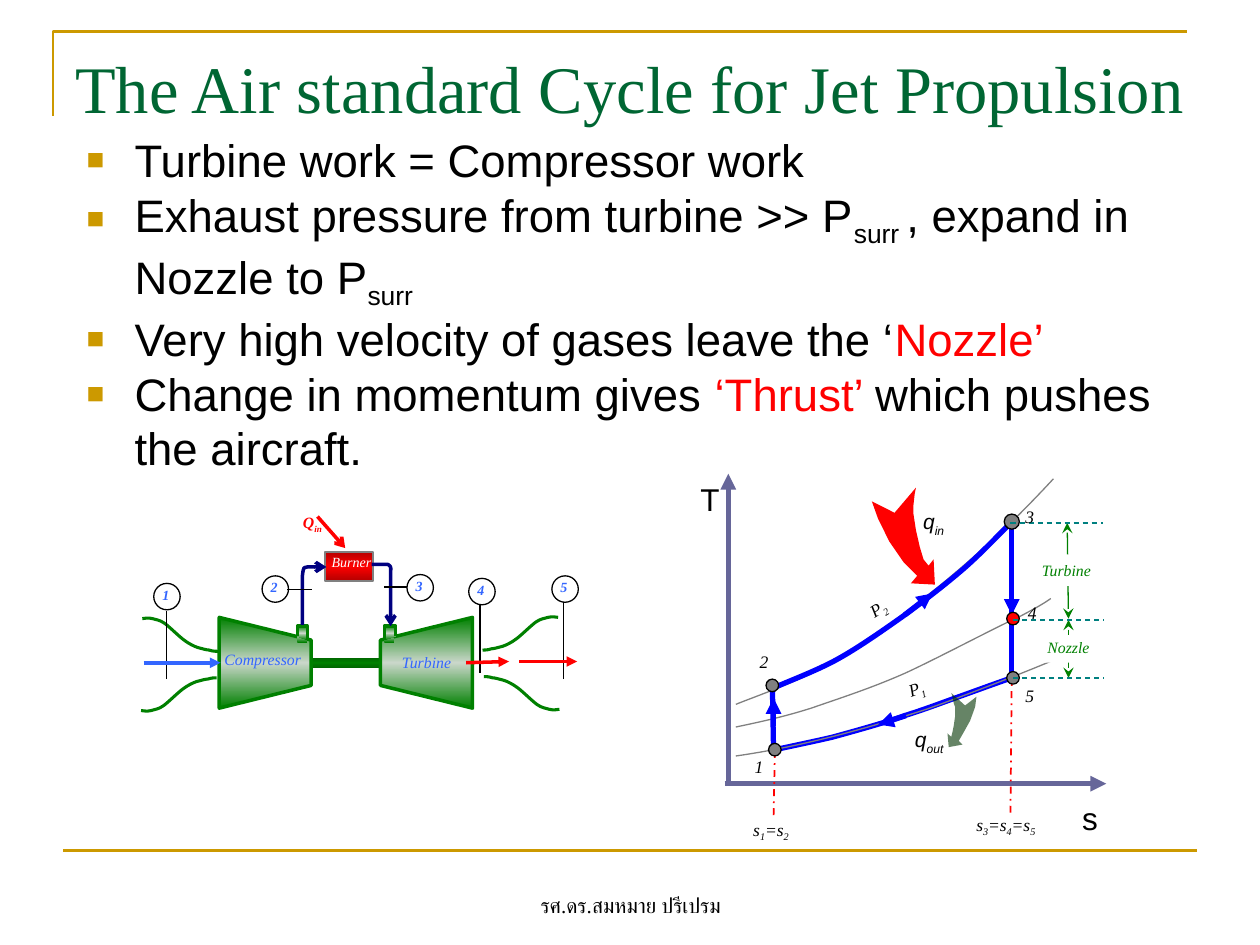
from copy import deepcopy
from lxml.etree import SubElement
from pptx import Presentation
from pptx.dml.color import RGBColor
from pptx.enum.dml import MSO_LINE
from pptx.enum.shapes import MSO_CONNECTOR, MSO_SHAPE
from pptx.enum.text import MSO_ANCHOR, PP_ALIGN
from pptx.oxml.ns import qn
from pptx.util import Inches, Pt

SERIF, SANS = "Times New Roman", "Arial"
C = dict(gold="CC9900", title="006633", black="000000", white="FFFFFF", red="FF0000",
         maroon="B60000", gray="808080", navy="000080", sky="3366FF", green="008000",
         pine="006700", mist="CAD7CA", axis="666699", blue="0000FF", teal="008080",
         moss="003300")

TITLE = "The Air standard Cycle for Jet Propulsion"
AUTHOR = "รศ.ดร.สมหมาย ปรีเปรม"
# In every text, the pieces after an odd number of bars are subscripts.
BULLETS = [
    [("Turbine work = Compressor work", "black")],
    [("Exhaust pressure from turbine >> P|surr |, expand in Nozzle to P|surr", "black")],
    [("Very high velocity of gases leave the ‘", "black"), ("Nozzle’", "red")],
    [("Change in momentum gives ", "black"), ("‘Thrust’ ", "red"),
     ("which pushes the aircraft.", "black")],
]

# Engine: station number -> left and top of its circle
STATIONS = {"1": (1.22, 4.63), "2": (2.08, 4.57), "3": (3.23, 4.56),
            "4": (3.72, 4.59), "5": (4.38, 4.57)}
AXIS_Y = 5.26
ROTORS = [(1.74, 2.47), (3.75, 3.02)]  # x of the wide and the narrow end
PORTS = [(2.44, 2.36), (3.05, 3.14)]  # x of the long and the short side
DUCT = [(0, 0), (.02, 0, .04, 0, .07, .01), (.09, .01, .12, .02, .16, .03),
        (.19, .04, .23, .06, .27, .09), (.31, .12, .38, .19, .42, .22),
        (.46, .25, .49, .25, .52, .26), (.56, .27, .58, .26, .6, .26)]
DUCTS = [(3.84, 5.37, 1, 1), (3.83, 5.16, 1, -1), (1.72, 5.38, -1, 1), (1.73, 5.17, -1, -1)]
BURNER_PIPES = [
    [(2.4, 4.96), (2.4, 4.57), (2.41, 4.49, 2.41, 4.51, 2.44, 4.5), (2.59, 4.5)],
    [(2.95, 4.48), (3.08, 4.48), (3.11, 4.5, 3.1, 4.5, 3.1, 4.58), (3.1, 4.97)],
]

# T-s diagram: centre, diameter and colour of each state
STATES = {"1": (6.15, 5.95, .1, "gray"), "2": (6.13, 5.44, .1, "gray"),
          "3": (8.03, 4.14, .12, "gray"), "4": (8.04, 4.91, .1, "red"),
          "5": (8.04, 5.38, .1, "gray")}
PROCESS, ISOBAR = ("blue", 3), ("gray", .75)
CURVES = [
    (PROCESS, [(6.11, 5.96), (6.19, 5.94, 6.44, 5.89, 6.61, 5.85),
               (6.79, 5.8, 7.01, 5.74, 7.18, 5.68), (7.34, 5.63, 7.47, 5.58, 7.61, 5.53),
               (7.75, 5.48, 7.94, 5.41, 8.03, 5.38)]),
    (ISOBAR, [(5.84, 6), (6.05, 5.97, 6.26, 5.93, 6.51, 5.87),
              (6.76, 5.81, 7.04, 5.73, 7.35, 5.63), (7.66, 5.52, 8.15, 5.33, 8.36, 5.24),
              (8.58, 5.16, 8.61, 5.14, 8.64, 5.12)]),
    (ISOBAR, [(5.84, 5.59), (5.96, 5.54, 6.34, 5.41, 6.58, 5.27),
              (6.82, 5.14, 7.08, 4.94, 7.29, 4.78), (7.5, 4.62, 7.66, 4.48, 7.84, 4.32),
              (8.02, 4.16, 8.26, 3.91, 8.36, 3.8)]),
    (PROCESS, [(6.14, 5.46), (6.22, 5.42, 6.47, 5.33, 6.65, 5.23),
               (6.83, 5.13, 7.04, 4.98, 7.21, 4.86), (7.37, 4.74, 7.5, 4.64, 7.64, 4.52),
               (7.78, 4.4, 7.95, 4.22, 8.03, 4.14)]),
    (ISOBAR, [(5.84, 5.77), (6.03, 5.73, 6.22, 5.69, 6.44, 5.62),
              (6.67, 5.54, 6.92, 5.46, 7.19, 5.34), (7.47, 5.21, 7.9, 4.98, 8.1, 4.89),
              (8.29, 4.79, 8.31, 4.77, 8.34, 4.75)]),
]
HEAT_IN = [(6.92, 3.98), (6.97, 4.12), (7.06, 4.3), (7.17, 4.46), (7.28, 4.57), (7.23, 4.63),
           (7.42, 4.64), (7.41, 4.44), (7.37, 4.49), (7.33, 4.44), (7.3, 4.34), (7.27, 4.21),
           (7.25, 4.08), (7.25, 4.01), (7.26, 3.92), (7.27, 3.87), (7.1, 4.07)]
HEAT_OUT = [(7.75, 5.53), (7.74, 5.61), (7.7, 5.72), (7.65, 5.81), (7.61, 5.88), (7.64, 5.91),
            (7.53, 5.93), (7.52, 5.82), (7.55, 5.85), (7.56, 5.81), (7.57, 5.76), (7.58, 5.69),
            (7.58, 5.61), (7.57, 5.58), (7.56, 5.53), (7.55, 5.5), (7.66, 5.6)]

# (colour, width, options, lines as x1, y1, x2, y2)
ENGINE_LINES = [
    ("black", .75, {}, [(3.23, 4.66, 3.05, 4.66), (2.28, 4.68, 2.48, 4.68),
                        (3.81, 5.34, 3.81, 4.8), (4.47, 5.39, 4.47, 4.78),
                        (1.32, 5.39, 1.32, 4.85)]),
    ("red", 2, dict(tail="arrow"), [(2.52, 4.1, 2.74, 4.35)]),
    ("sky", 2, dict(tail="triangle"), [(1.14, 5.26, 1.75, 5.26)]),
    ("red", 2, dict(tail="triangle"), [(3.7, 5.26, 4.04, 5.25), (4.12, 5.25, 4.58, 5.25)]),
]
CYCLE_LINES = [
    ("axis", 3, dict(tail="triangle"), [(5.75, 6.22, 8.78, 6.22), (5.78, 6.24, 5.78, 3.76)]),
    ("red", 1, dict(dash=MSO_LINE.DASH_DOT), [(6.14, 6.47, 6.15, 5.95), (8.02, 6.45, 8.03, 5.35)]),
    ("blue", 3, {}, [(6.13, 5.44, 6.14, 5.98), (8.03, 4.16, 8.03, 5.37)]),
    ("blue", 3, dict(tail="triangle"), [(7.19, 5.68, 6.97, 5.75), (7.18, 4.88, 7.4, 4.71),
                                        (6.14, 5.76, 6.14, 5.54), (8.03, 4.69, 8.03, 4.88)]),
]
SPAN_LINES = [
    ("green", .75, dict(head="stealth", tail="stealth"), [(8.48, 4.92, 8.48, 5.38),
                                                          (8.47, 4.15, 8.48, 4.91)]),
    ("teal", .75, dict(dash=MSO_LINE.DASH), [(8.02, 4.15, 8.75, 4.15), (8.04, 5.38, 8.76, 5.38),
                                             (8.04, 4.92, 8.76, 4.92)]),
]

TIGHT = dict(center=True, spacing=.8)
# (size, colour, options, labels as text, box, rotation)
LABELS = [
    (8, "white", TIGHT, [("Burner", (2.51, 4.37, .56, .21), 0)]),
    (9, "red", dict(center=True, bold=True), [("Q|in", (2.25, 4.02, .46, .25), 0)]),
    (9, "sky", dict(center=True), [("Compressor", (1.66, 5.11, .85, .25), 0),
                                   ("Turbine", (3.05, 5.13, .67, .25), 0)]),
    (8, "sky", dict(TIGHT, bold=True), [(number, (x - .03, y, .2, .21), 0)
                                        for number, (x, y) in STATIONS.items()]),
    (18, "black", dict(font=SANS, italic=False), [("s", (8.49, 6.29, .29, .4), 0),
                                                  ("T", (5.46, 3.76, .29, .4), 0)]),
    (12, "black", dict(font=SANS, center=True, wrap=False), [("q|out", (7.15, 5.72, .45, .3), 0),
                                                            ("q|in", (7.22, 3.99, .38, .3), 0)]),
    (10, "black", dict(spacing=.8), [("P|2", (6.8, 4.7, .37, .23), 328.1),
                                     ("P|1", (7.11, 5.34, .37, .23), 340.7)]),
    (10, "black", {}, [("1", (5.89, 5.95, .23, .27), 0), ("2", (5.93, 5.12, .33, .27), 0),
                       ("3", (8.04, 3.97, .29, .27), 0), ("4", (8.06, 4.73, .33, .27), 0),
                       ("5", (8.04, 5.39, .33, .27), 0), ("s|1|=s|2", (5.88, 6.45, .53, .27), 0),
                       ("s|3|=s|4|=s|5", (7.65, 6.41, .8, .27), 0)]),
    (9, "green", dict(fill="white"), [("Turbine", (8.17, 4.4, .61, .25), 0)]),
    (9, "green", dict(TIGHT, fill="white"), [("Nozzle", (8.2, 5.04, .56, .22), 0)]),
]

prs = Presentation()
prs.slide_width, prs.slide_height = Inches(10), Inches(7.5)
shapes = prs.slides.add_slide(prs.slide_layouts[6]).shapes


def rgb(name):
    return RGBColor.from_string(C[name])


def stroke(shape, color, width, head=None, tail=None, dash=None):
    shape.line.color.rgb = rgb(color)
    shape.line.width = Pt(width)
    if dash:
        shape.line.dash_style = dash
    for end, kind in (("a:headEnd", head), ("a:tailEnd", tail)):
        if kind:
            SubElement(shape.line._get_or_add_ln(), qn(end), type=kind)


def paint(shape, fill=None, line=None, width=.75, **ends):
    """Fill with nothing, a colour, or an (edge, middle) gradient running top to bottom."""
    shape.shadow.inherit = False
    if fill is None:
        shape.fill.background()
    elif isinstance(fill, str):
        shape.fill.solid()
        shape.fill.fore_color.rgb = rgb(fill)
    else:
        shape.fill.gradient()
        shape.fill.gradient_angle = 90
        stops = shape.fill.gradient_stops
        for stop, color, place in zip(stops, fill, (0, .5)):
            stop.color.rgb, stop.position = rgb(color), place
        last = deepcopy(stops[0]._gs)
        last.set("pos", "100000")
        stops[1]._gs.addnext(last)
    if line:
        stroke(shape, line, width, **ends)
    else:
        shape.line.fill.background()
    return shape


def preset(kind, box, **style):
    return paint(shapes.add_shape(kind, *map(Inches, box)), **style)


def outline(steps, close=False, **style):
    """Draw steps of straight (x, y) and cubic (x1, y1, x2, y2, x, y) form."""
    steps = [tuple(map(Inches, step)) for step in steps]
    builder = shapes.build_freeform(*steps[0], scale=1.0)
    builder.add_line_segments([step[-2:] for step in steps[1:]], close=close)
    shape = builder.convert_to_shape()
    segments = list(shape._element.iter(qn("a:lnTo")))
    for segment, step in zip(segments, steps[1:]):
        if len(step) == 6:
            segment.tag = qn("a:cubicBezTo")
            for i in (2, 0):
                control = deepcopy(segment[-1])
                control.set("x", str(step[i] - shape.left))
                control.set("y", str(step[i + 1] - shape.top))
                segment.insert(0, control)
    return paint(shape, **style)


def draw_lines(groups):
    for color, width, options, ends in groups:
        for end in ends:
            link = shapes.add_connector(MSO_CONNECTOR.STRAIGHT, *map(Inches, end))
            stroke(link, color, width, **options)
            SubElement(link._element.spPr, qn("a:effectLst"))


def write(paragraph, text, color):
    for i, piece in enumerate(text.split("|")):
        run = paragraph.add_run()
        run.text = piece
        run.font.color.rgb = rgb(color)
        if i % 2:
            run.font._element.set("baseline", "-25000")


def label(text, box, size, color, rotation=0, font=SERIF, italic=True, bold=False, center=False,
          spacing=None, wrap=True, fill=None, anchor=MSO_ANCHOR.TOP):
    if fill:
        holder = preset(MSO_SHAPE.RECTANGLE, box, fill=fill)
    else:
        holder = shapes.add_textbox(*map(Inches, box))
    holder.rotation = rotation
    frame = holder.text_frame
    frame.word_wrap, frame.vertical_anchor = wrap, anchor
    paragraph = frame.paragraphs[0]
    paragraph.alignment = PP_ALIGN.CENTER if center else PP_ALIGN.LEFT
    paragraph.line_spacing = spacing
    face = paragraph.font
    face.name, face.size, face.italic, face.bold = font, Pt(size), italic, bold
    write(paragraph, text, color)


# Frame, title and bullets
outline([(.42, .92), (.42, .25), (9.42, .25)], line="gold", width=1.5)
draw_lines([("gold", 1.5, {}, [(.5, 6.75, 9.5, 6.75)])])
label(AUTHOR, (3.42, 6.83, 3.17, .5), 12, "black", italic=False, center=True,
      anchor=MSO_ANCHOR.BOTTOM)
label(TITLE, (.5, .32, 9.18, .88), 38, "title", italic=False)
body = shapes.add_textbox(*map(Inches, (.59, 1, 9, 2.72))).text_frame
body.word_wrap = True
for i, bullet in enumerate(BULLETS):
    item = body.add_paragraph() if i else body.paragraphs[0]
    item.font.name, item.font.size = SANS, Pt(26)
    props = item._p.get_or_add_pPr()
    props.set("marL", str(Inches(.38)))
    props.set("indent", str(-Inches(.38)))
    SubElement(SubElement(props, qn("a:buClr")), qn("a:srgbClr"), val=C["gold"])
    SubElement(props, qn("a:buSzPct"), val="65000")
    SubElement(props, qn("a:buFont"), typeface=SANS)
    SubElement(props, qn("a:buChar"), char="■")
    props.append(props.find(qn("a:defRPr")))  # the schema wants it after the bullet
    for text, color in bullet:
        write(item, text, color)

# Engine
preset(MSO_SHAPE.RECTANGLE, (2.58, 4.38, .38, .23), fill=("maroon", "red"), line="gray", width=1)
preset(MSO_SHAPE.RECTANGLE, (2.47, 5.22, .56, .08), fill=("pine", "green"))
metal = dict(fill=("green", "mist"), line="green", width=2)
for wide, narrow in ROTORS:
    outline([(wide, AXIS_Y - .36), (narrow, AXIS_Y - .18), (narrow, AXIS_Y + .18),
             (wide, AXIS_Y + .36)], close=True, **metal)
for long_side, short_side in PORTS:
    preset(MSO_SHAPE.RECTANGLE, (min(long_side, short_side), 4.97, .08, .13), fill=metal["fill"])
    outline([(long_side, 5.08), (long_side, 4.97), (short_side, 4.97), (short_side, 5.05)],
            **metal)
for pipe in BURNER_PIPES:
    outline(pipe, line="navy", width=2, tail="arrow")
for x, y, across, down in DUCTS:
    outline([[(y + down * d) if i % 2 else (x + across * d) for i, d in enumerate(step)]
             for step in DUCT], line="green", width=1.75)
draw_lines(ENGINE_LINES)
for x, y in STATIONS.values():
    preset(MSO_SHAPE.OVAL, (x, y, .21, .21), line="black")

# T-s diagram
for (color, width), steps in CURVES:
    outline(steps, line=color, width=width)
outline(HEAT_IN, close=True, fill="red")
heat_out = outline(HEAT_OUT, close=True, fill="moss")
SubElement(heat_out._element.spPr.find(".//" + qn("a:srgbClr")), qn("a:alpha"), val="60000")
draw_lines(CYCLE_LINES)
for x, y, size, color in STATES.values():
    preset(MSO_SHAPE.OVAL, (x - size / 2, y - size / 2, size, size), fill=color, line="black")
draw_lines(SPAN_LINES)

for size, color, options, labels in LABELS:
    for text, box, rotation in labels:
        label(text, box, size, color, rotation, **options)

prs.save("out.pptx")
